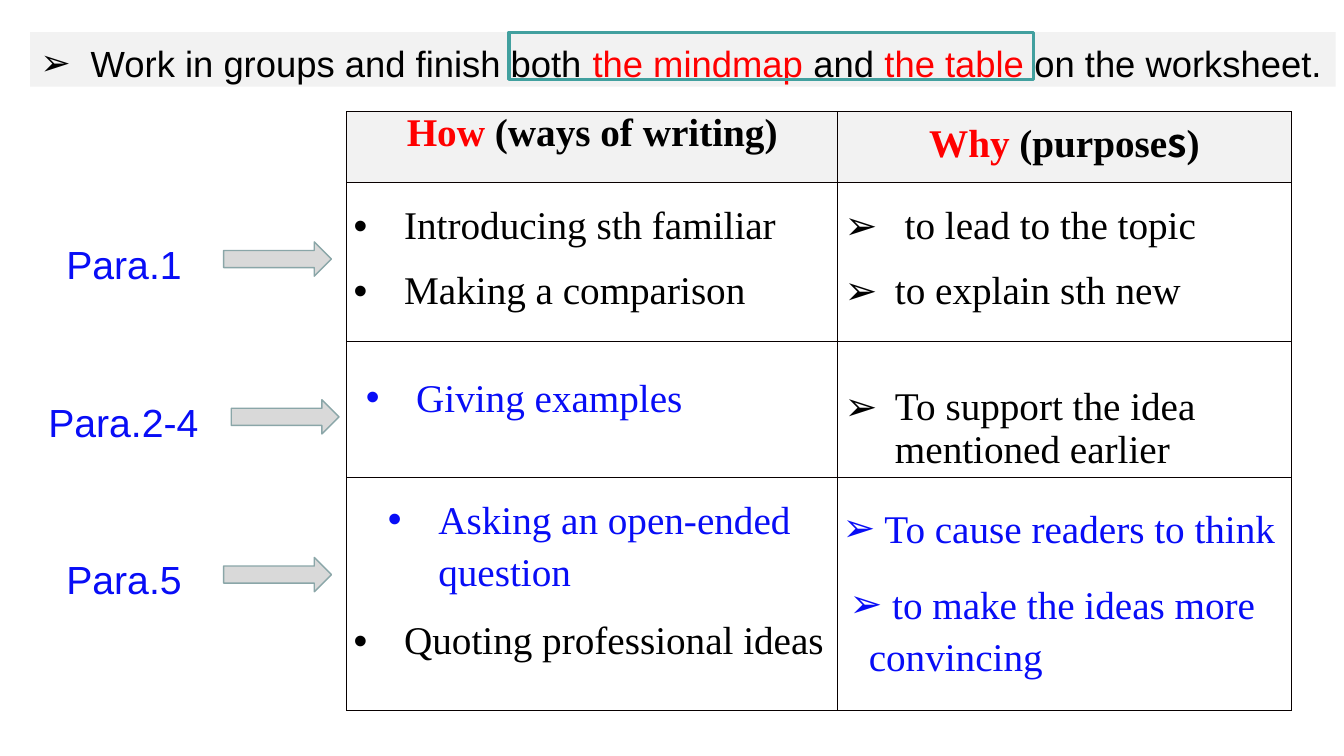
"""Build a slide that pairs ways of writing with their purposes, paragraph by paragraph."""
from dataclasses import dataclass

from lxml.etree import SubElement
from pptx import Presentation
from pptx.dml.color import RGBColor
from pptx.enum.shapes import MSO_SHAPE as Shape
from pptx.enum.text import MSO_ANCHOR as Anchor, MSO_AUTO_SIZE as AutoSize, PP_ALIGN as Align
from pptx.oxml import parse_xml
from pptx.oxml.ns import nsdecls, qn
from pptx.util import Pt


@dataclass(frozen=True)
class Theme:
    black: str = "000000"
    red: str = "FF0000"
    blue: str = "080DF6"
    band: str = "F2F2F2"
    arrow: str = "D9D9D9"
    arrow_line: str = "8AA6A8"
    frame: str = "42A09F"
    border: str = "080000"
    sans: str = "Arial"
    serif: str = "Times New Roman"
    cjk: str = "Noto Sans CJK SC"
    title_size: int = 26
    body_size: int = 28


theme = Theme()


def write(text_frame, paragraphs, font=theme.serif, size=theme.body_size, bold=False,
          spacing=1.0, align=Align.LEFT, bullet=None, indent=36):
    """Fill a text frame with paragraphs, each a list of (text, colour[, font]) runs."""
    for index, runs in enumerate(paragraphs):
        paragraph = text_frame.add_paragraph() if index else text_frame.paragraphs[0]
        layout = {"alignment": align, "line_spacing": spacing, "space_before": Pt(0)}
        for name, value in layout.items():
            setattr(paragraph, name, value)
        if bullet:
            properties = paragraph._p.get_or_add_pPr()
            properties.set("marL", str(Pt(indent)))
            properties.set("indent", str(-Pt(indent)))
            SubElement(properties, qn("a:buFont")).set("typeface", theme.sans)
            SubElement(properties, qn("a:buChar")).set("char", bullet)
        for text, colour, *own_font in runs:
            run = paragraph.add_run()
            run.text = text
            look = {"name": own_font[0] if own_font else font, "size": Pt(size), "bold": bold}
            for name, value in look.items():
                setattr(run.font, name, value)
            run.font.color.rgb = RGBColor.from_string(colour)


def add_outlined(kind, left, top, width, height, fill, line, line_width):
    """Add a preset shape with a coloured outline and an optional fill."""
    shape = slide.shapes.add_shape(kind, Pt(left), Pt(top), Pt(width), Pt(height))
    shape.shadow.inherit = False
    if fill:
        shape.fill.solid()
        shape.fill.fore_color.rgb = RGBColor.from_string(fill)
    else:
        shape.fill.background()
    shape.line.color.rgb = RGBColor.from_string(line)
    shape.line.width = Pt(line_width)


presentation = Presentation()
presentation.slide_width, presentation.slide_height = Pt(960), Pt(540)
slide = presentation.slides.add_slide(presentation.slide_layouts[5])

title = slide.shapes.title
for name, value in {"left": 21.6, "top": 23, "width": 932.4, "height": 38.9}.items():
    setattr(title, name, Pt(value))
for name, value in {"word_wrap": True, "auto_size": AutoSize.NONE, "vertical_anchor": Anchor.TOP}.items():
    setattr(title.text_frame, name, value)
title.fill.solid()
title.fill.fore_color.rgb = RGBColor.from_string(theme.band)
write(title.text_frame, [[
    ("Work in groups and finish both ", theme.black), ("the mindmap ", theme.red),
    ("and ", theme.black), ("the table", theme.red), (" on the worksheet.", theme.black),
]], font=theme.sans, size=theme.title_size, spacing=1.1, bullet="➢")

column_widths = [350.6, 324]
row_heights = [50.4, 113.8, 97.2, 166.4]
table = slide.shapes.add_table(4, 2, Pt(247.7), Pt(79.9), Pt(sum(column_widths)),
                               Pt(sum(row_heights))).table
table.first_row = table.horz_banding = False
for column, width in zip(table.columns, column_widths):
    column.width = Pt(width)
for row, height in zip(table.rows, row_heights):
    row.height = Pt(height)

for row_index, row in enumerate(table.rows):
    for cell in row.cells:
        margins = {"margin_left": 5, "margin_right": 5, "margin_top": 0, "margin_bottom": 0}
        for name, value in margins.items():
            setattr(cell, name, Pt(value))
        if row_index == 0:
            cell.fill.solid()
            cell.fill.fore_color.rgb = RGBColor.from_string(theme.band)
        else:
            cell.fill.background()
        for position, side in enumerate(("lnL", "lnR", "lnT", "lnB")):
            cell._tc.get_or_add_tcPr().insert(position, parse_xml(
                f'<a:{side} {nsdecls("a")} w="{Pt(1)}"><a:solidFill>'
                f'<a:srgbClr val="{theme.border}"/></a:solidFill></a:{side}>'))

headers = [
    [("How", theme.red), (" (ways of writing)", theme.black)],
    [("Why", theme.red), (" (purpose", theme.black), ("s", theme.black, theme.cjk), (")", theme.black)],
]
for column_index, header in enumerate(headers):
    write(table.cell(0, column_index).text_frame, [header], bold=True, align=Align.CENTER)

cell_entries = [
    (1, 0, "•", 1.5, 0, ["Introducing sth familiar", "Making a comparison"]),
    (1, 1, "➢", 1.5, 0, [" to lead to the topic", "to explain sth new"]),
    (2, 1, "➢", 1.0, 31, ["To support the idea mentioned earlier"]),
    (3, 0, "•", 1.0, 101, ["Quoting professional ideas"]),
]
for row_index, column_index, bullet, spacing, margin_top, lines in cell_entries:
    cell = table.cell(row_index, column_index)
    cell.margin_top = Pt(margin_top)
    write(cell.text_frame, [[(line, theme.black)] for line in lines], spacing=spacing, bullet=bullet)

arrow_shifts = [0, 5.4, 0]
for index, shift in enumerate(arrow_shifts):
    add_outlined(Shape.RIGHT_ARROW, 159.8 + shift, 172.8 + 112.7 * index, 77, 24.5,
                 theme.arrow, theme.arrow_line, 1)
add_outlined(Shape.RECTANGLE, 363.6, 23, 374.4, 33.8, None, theme.frame, 2.25)

answer = {"bullet": "•"}
purpose = {"bullet": "➢", "indent": 13.7}
label = {"font": theme.sans}
blue_notes = [
    ("Giving examples", 254.2, 259.9, 283.7, 41, answer),
    ("Asking an open-ended question", 270, 347, 317.5, 74.9, answer),
    (" To cause readers to think", 594.7, 353.5, 327.6, 41, purpose),
    (" to make the ideas more convincing", 599.8, 407.5, 317.5, 74.9, purpose),
    ("Para.1", 40.3, 164.9, 107.3, 41, label),
    ("Para.2-4", 27.4, 277.4, 132.5, 41, label),
    ("Para.5", 40.3, 389.9, 107.3, 41, label),
]
for text, left, top, width, height, style in blue_notes:
    note = slide.shapes.add_textbox(Pt(left), Pt(top), Pt(width), Pt(height))
    note.text_frame.word_wrap = True
    write(note.text_frame, [[(text, theme.blue)]], spacing=1.1, **style)

presentation.save("out.pptx")
